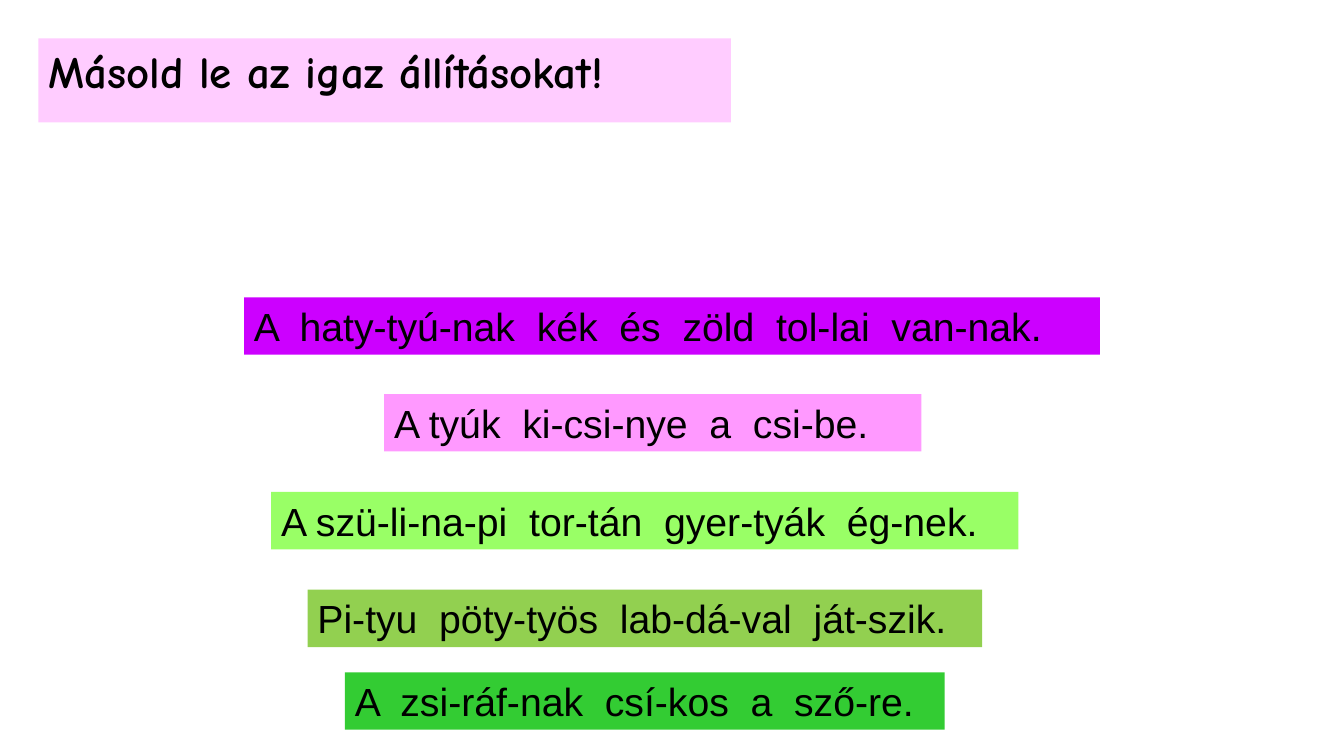
"""Build a reading slide with a task title and five coloured sentences."""
from dataclasses import dataclass

from pptx import Presentation
from pptx.dml.color import RGBColor
from pptx.enum import text
from pptx.util import Inches, Pt


@dataclass(frozen=True)
class Theme:
    """Colours, fonts and type sizes of the slide."""
    ink: str = "000000"
    head: str = "FFCCFF"
    bars: tuple = ("CC00FF", "FF99FF", "99FF66", "92D050", "33CC33")
    title: str = "Comic Neue"
    body: str = "Arial"
    big: int = 32
    small: int = 28


THEME = Theme()
TASK = "Másold le az igaz állításokat!"
LINES = [
    ("A  haty-tyú-nak  kék  és  zöld  tol-lai  van-nak.", 2.42, 2.95, 8.49),
    ("A tyúk  ki-csi-nye  a  csi-be.", 3.81, 3.91, 5.33),
    ("A szü-li-na-pi  tor-tán  gyer-tyák  ég-nek.", 2.69, 4.88, 7.41),
    ("Pi-tyu  pöty-työs  lab-dá-val  ját-szik.", 3.05, 5.85, 6.69),
    ("A  zsi-ráf-nak  csí-kos  a  sző-re.", 3.42, 6.67, 5.95),
]


def style(box, words, fill, face, size, bold=False):
    """Fill a box and set its one line of text."""
    box.fill.solid()
    box.fill.fore_color.rgb = RGBColor.from_string(fill)
    frame = box.text_frame
    frame.word_wrap = True
    frame.auto_size = text.MSO_AUTO_SIZE.SHAPE_TO_FIT_TEXT
    frame.vertical_anchor = text.MSO_ANCHOR.TOP
    line = frame.paragraphs[0]
    line.text = words
    line.alignment = text.PP_ALIGN.LEFT
    font = line.font
    font.name, font.size, font.bold = face, Pt(size), bold
    font.color.rgb = RGBColor.from_string(THEME.ink)


def add_title(slide):
    """Place the task in the title placeholder."""
    box = slide.shapes.title
    box.left, box.top = Inches(0.38), Inches(0.38)
    box.width, box.height = Inches(6.87), Inches(0.64)
    style(box, TASK, THEME.head, THEME.title, THEME.big, True)


def add_bar(slide, words, left, top, width, fill):
    """Add one sentence on a coloured bar."""
    box = slide.shapes.add_textbox(
        Inches(left), Inches(top), Inches(width), Inches(0.57))
    style(box, words, fill, THEME.body, THEME.small)


def main():
    """Build and save the slide."""
    deck = Presentation()
    deck.slide_width, deck.slide_height = Inches(13.33), Inches(7.5)
    slide = deck.slides.add_slide(deck.slide_layouts[5])
    add_title(slide)
    for line, fill in zip(LINES, THEME.bars):
        add_bar(slide, *line, fill)
    deck.save("out.pptx")


if __name__ == "__main__":
    main()
